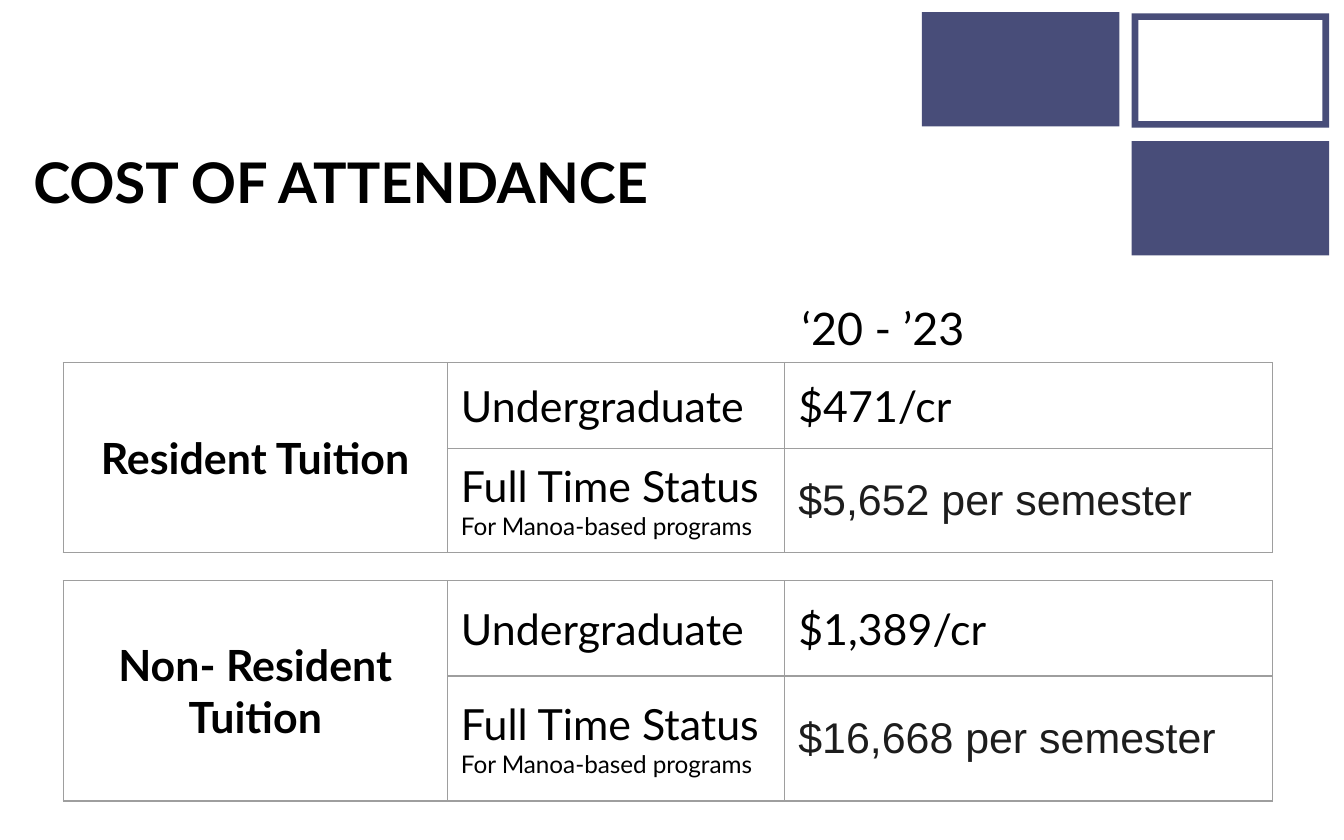
"""Build the cost of attendance slide."""
from lxml import etree
from pptx import Presentation
from pptx.dml.color import RGBColor
from pptx.enum import shapes, text
from pptx.oxml.ns import qn
from pptx.util import Inches, Pt

THEME = {
    "block": "484D79", "paper": "FFFFFF", "ink": "000000", "soft": "1D1D1D",
    "rule": "9E9E9E", "font": "Lato", "plain": "Arial",
    "title": 30, "years": 24, "body": 23, "small": 13,
}
TITLE = "COST OF ATTENDANCE"
YEARS = "‘20 - ’23"
LEVEL = "Undergraduate"
FULL = ("Full Time Status", "For Manoa-based programs")
PLANS = [
    {"name": "Resident Tuition", "credit": "$471/cr",
     "term": "$5,652 per semester", "top": 2.7, "rows": (0.64, 0.77)},
    {"name": "Non- Resident Tuition", "credit": "$1,389/cr",
     "term": "$16,668 per semester", "top": 4.32, "rows": (0.71, 0.93)},
]
LEFT, COLS = 0.47, (2.86, 2.51, 3.63)
WIDE, HIGH = 1.47, 0.85
EDGE = 0.05
BLOCKS = [
    (6.86, 0.09, WIDE, HIGH, "block"),
    (8.42, 0.1, WIDE, HIGH, "block"),
    (8.42 + EDGE, 0.1 + EDGE, WIDE - 2 * EDGE, HIGH - 2 * EDGE, "paper"),
    (8.42, 1.05, WIDE, HIGH, "block"),
]


def color(name):
    return RGBColor.from_string(THEME[name])


def write(frame, *lines, sizes=("body",), font="font", ink="ink",
          bold=False, align=text.PP_ALIGN.LEFT):
    for i, (line, size) in enumerate(zip(lines, sizes)):
        para = frame.paragraphs[0] if i == 0 else frame.add_paragraph()
        para.alignment = align
        run = para.add_run()
        run.text = line
        run.font.size = Pt(THEME[size])
        run.font.name = THEME[font]
        run.font.bold = bold
        run.font.color.rgb = color(ink)


def label(slide, words, box, **form):
    frame = slide.shapes.add_textbox(*map(Inches, box)).text_frame
    frame.word_wrap = True
    frame.margin_left = frame.margin_right = Inches(0.1)
    frame.margin_top = frame.margin_bottom = Inches(0.1)
    write(frame, words, **form)


def dress(cell):
    cell.vertical_anchor = text.MSO_ANCHOR.MIDDLE
    cell.margin_left = cell.margin_right = Inches(0.1)
    cell.margin_top = cell.margin_bottom = Inches(0.08)
    props = cell._tc.get_or_add_tcPr()
    for side in ("lnL", "lnR", "lnT", "lnB"):
        line = etree.SubElement(props, qn("a:" + side), w=str(Pt(0.75)))
        fill = etree.SubElement(line, qn("a:solidFill"))
        etree.SubElement(fill, qn("a:srgbClr"), val=THEME["rule"])
    cell.fill.background()


def tuition(slide, plan):
    rows = plan["rows"]
    box = (LEFT, plan["top"], sum(COLS), sum(rows))
    grid = slide.shapes.add_table(len(rows), len(COLS), *map(Inches, box)).table
    grid.first_row = grid.horz_banding = False
    for col, width in zip(grid.columns, COLS):
        col.width = Inches(width)
    for row, height in zip(grid.rows, rows):
        row.height = Inches(height)
    for cell in grid.iter_cells():
        dress(cell)
    grid.cell(0, 0).merge(grid.cell(1, 0))
    write(grid.cell(0, 0).text_frame, plan["name"], bold=True,
          align=text.PP_ALIGN.CENTER)
    write(grid.cell(0, 1).text_frame, LEVEL)
    write(grid.cell(0, 2).text_frame, plan["credit"])
    write(grid.cell(1, 1).text_frame, *FULL, sizes=("body", "small"))
    write(grid.cell(1, 2).text_frame, plan["term"], font="plain", ink="soft")


def main():
    deck = Presentation()
    deck.slide_width, deck.slide_height = Inches(10), Inches(6.25)
    slide = deck.slides.add_slide(deck.slide_layouts[6])
    for *box, tone in BLOCKS:
        block = slide.shapes.add_shape(
            shapes.MSO_SHAPE.RECTANGLE, *map(Inches, box))
        block.shadow.inherit = False
        block.fill.solid()
        block.fill.fore_color.rgb = color(tone)
        block.line.fill.background()
    for plan in PLANS:
        tuition(slide, plan)
    label(slide, YEARS, (5.6, 2.14, 1.94, 0.56), sizes=("years",),
          align=text.PP_ALIGN.CENTER)
    label(slide, TITLE, (0.15, 1, 9.32, 0.7), sizes=("title",), bold=True)
    deck.save("out.pptx")


if __name__ == "__main__":
    main()
